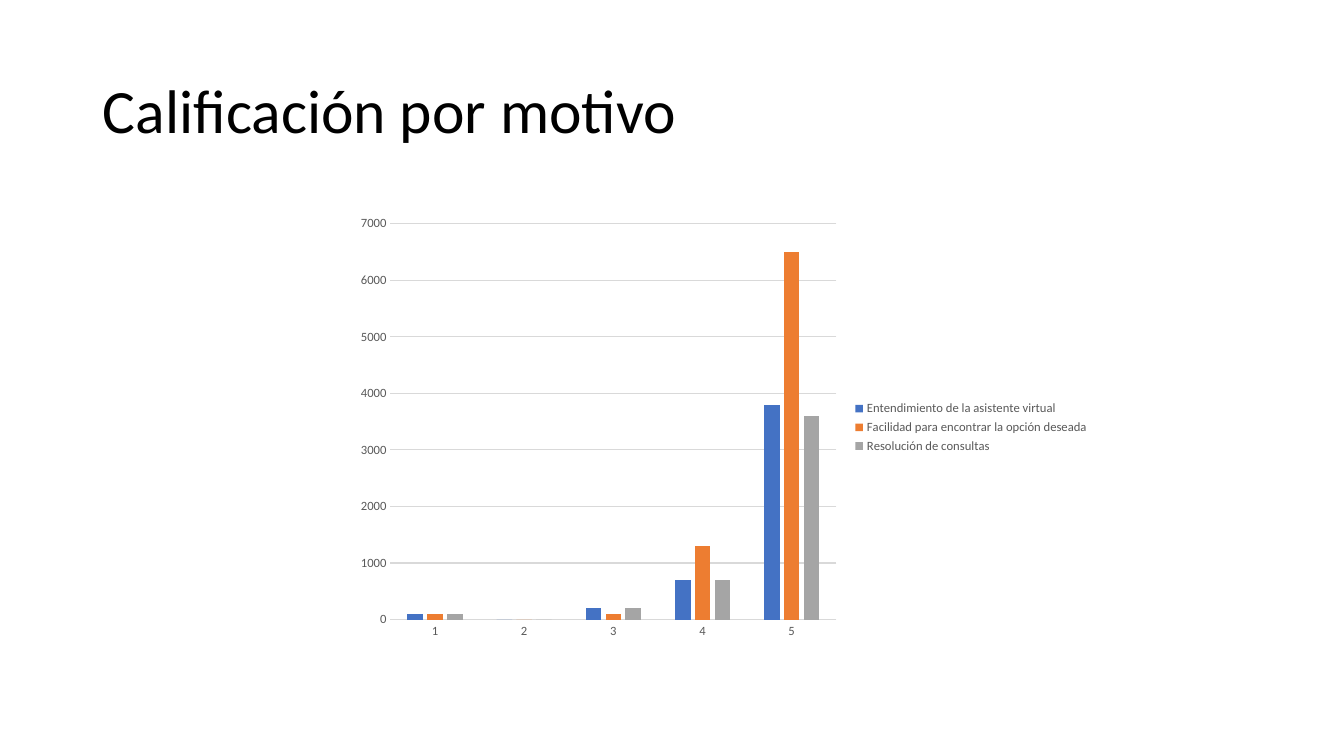
from dataclasses import dataclass

from pptx import Presentation
from pptx.chart.data import CategoryChartData
from pptx.dml.color import RGBColor
from pptx.enum.chart import XL_CHART_TYPE, XL_LEGEND_POSITION, XL_TICK_MARK
from pptx.enum.text import MSO_ANCHOR, PP_ALIGN
from pptx.util import Inches, Pt


@dataclass(frozen=True)
class Theme:
    font: str = "Calibri"
    title_size: float = 44
    chart_size: float = 10
    label_size: float = 9
    title_color: str = "000000"
    label_color: str = "595959"
    grid_color: str = "D9D9D9"
    grid_width: float = 0.75
    series_colors: tuple = ("4472C4", "ED7D31", "A5A5A5")


THEME = Theme()
SCORES = ("1", "2", "3", "4", "5")
RATINGS = {
    "Entendimiento de la asistente virtual": (100, 0, 200, 700, 3800),
    "Facilidad para encontrar la opción deseada": (100, 0, 100, 1300, 6500),
    "Resolución de consultas": (100, 0, 200, 700, 3600),
}


def style_font(font, size, color):
    font.name = THEME.font
    font.size = Pt(size)
    font.bold = False
    font.color.rgb = RGBColor.from_string(color)


def style_line(line):
    line.color.rgb = RGBColor.from_string(THEME.grid_color)
    line.width = Pt(THEME.grid_width)


def style_axis(axis):
    axis.major_tick_mark = XL_TICK_MARK.NONE
    axis.minor_tick_mark = XL_TICK_MARK.NONE
    style_font(axis.tick_labels.font, THEME.label_size, THEME.label_color)


def add_title(slide, wording):
    title = slide.shapes.title
    title.left, title.top = Inches(0.92), Inches(0.4)
    title.width, title.height = Inches(11.5), Inches(1.45)
    frame = title.text_frame
    frame.text = wording
    frame.word_wrap = True
    frame.vertical_anchor = MSO_ANCHOR.MIDDLE
    paragraph = frame.paragraphs[0]
    paragraph.alignment = PP_ALIGN.LEFT
    paragraph.line_spacing = 0.9
    style_font(paragraph.runs[0].font, THEME.title_size, THEME.title_color)


def add_legend(chart):
    chart.has_legend = True
    chart.legend.position = XL_LEGEND_POSITION.RIGHT
    chart.legend.include_in_layout = False
    style_font(chart.legend.font, THEME.label_size, THEME.label_color)


def add_ratings_chart(slide):
    ratings = CategoryChartData()
    ratings.categories = SCORES
    for reason, counts in RATINGS.items():
        ratings.add_series(reason, counts)
    chart = slide.shapes.add_chart(
        XL_CHART_TYPE.COLUMN_CLUSTERED,
        Inches(3.43), Inches(2.06), Inches(7.47), Inches(4.36), ratings,
    ).chart
    chart.has_title = False
    style_font(chart.font, THEME.chart_size, THEME.title_color)

    columns = chart.plots[0]
    columns.gap_width = 219
    columns.overlap = -27
    columns.vary_by_categories = False
    for series, color in zip(columns.series, THEME.series_colors):
        series.format.fill.solid()
        series.format.fill.fore_color.rgb = RGBColor.from_string(color)

    style_axis(chart.category_axis)
    style_line(chart.category_axis.format.line)
    counts_axis = chart.value_axis
    style_axis(counts_axis)
    counts_axis.minimum_scale, counts_axis.maximum_scale = 0, 7000
    counts_axis.major_unit = 1000
    counts_axis.format.line.fill.background()
    counts_axis.has_major_gridlines = True
    style_line(counts_axis.major_gridlines.format.line)
    add_legend(chart)


def main():
    deck = Presentation()
    deck.slide_width, deck.slide_height = Inches(13.33), Inches(7.5)
    slide = deck.slides.add_slide(deck.slide_layouts[5])
    add_title(slide, "Calificación por motivo")
    add_ratings_chart(slide)
    deck.save("out.pptx")


if __name__ == "__main__":
    main()
